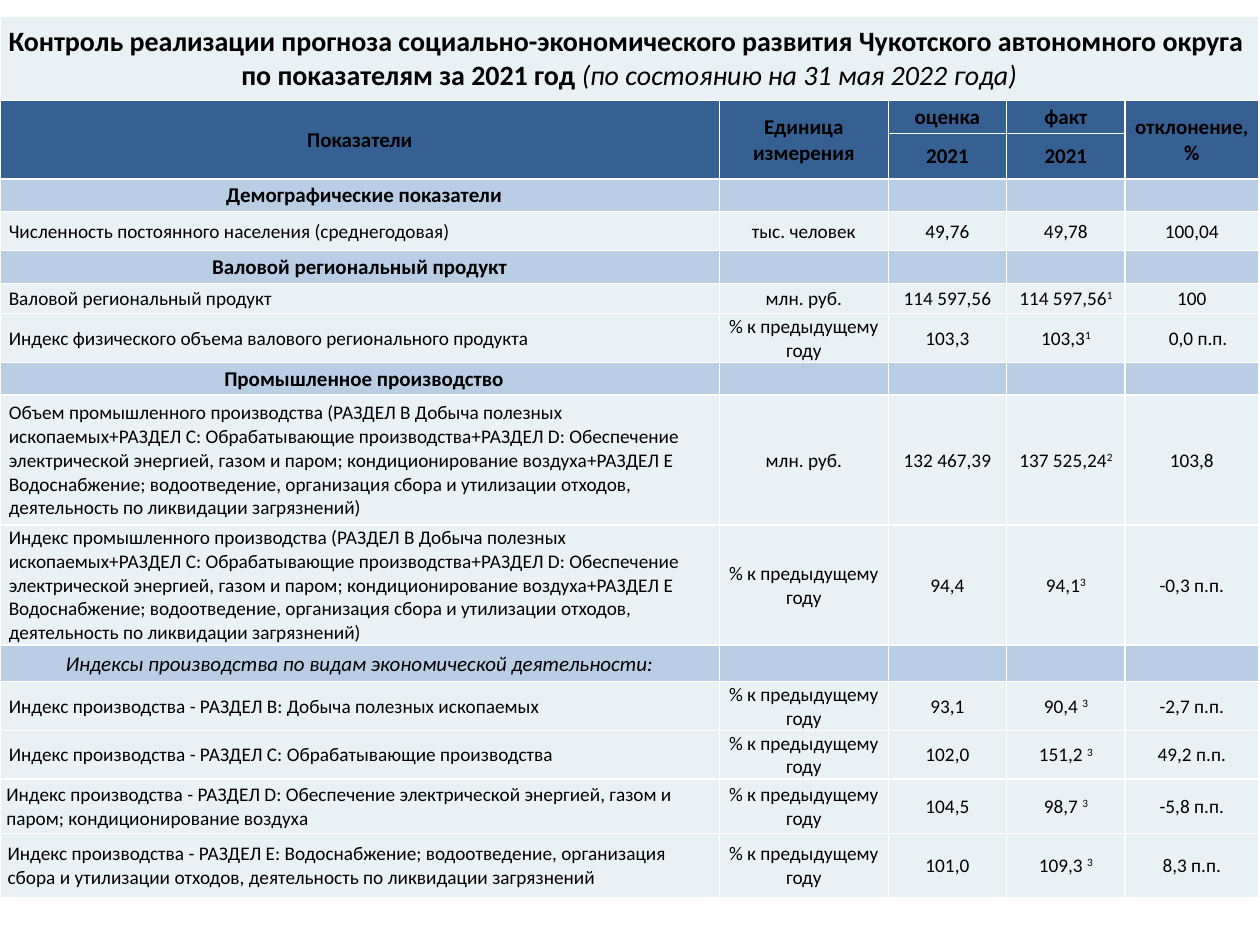
from lxml import etree
from pptx import Presentation
from pptx.dml import color as dml
from pptx.enum import text
from pptx.oxml.ns import qn
from pptx.util import Inches, Pt

COLORS = {"header": "376092", "section": "B9CDE5", "body": "E9F1F5",
          "line": "FFFFFF", "ink": "000000"}
COLUMNS = [5.71, 1.34, 0.94, 0.94, 1.06]
HEADER_HEIGHTS = [0.67, 0.26, 0.36]
SCOPE = ("(РАЗДЕЛ B Добыча полезных ископаемых+РАЗДЕЛ C: Обрабатывающие "
         "производства+РАЗДЕЛ D: Обеспечение электрической энергией, газом и паром; "
         "кондиционирование воздуха+РАЗДЕЛ E Водоснабжение; водоотведение, "
         "организация сбора и утилизации отходов, деятельность по ликвидации "
         "загрязнений)")
PERCENT = "% к предыдущему году"
BOLD = {"size": Pt(12), "bold": True}
ITALIC = {"size": Pt(12), "italic": True}

# Sections: height, heading, heading format, left margin.
# Indicators: height, name, left margin, unit, estimate, fact, footnote, deviation.
ROWS = [
    (0.26, "Демографические показатели", BOLD, 0.08),
    (0.31, "Численность постоянного населения (среднегодовая)", 0.07,
     "тыс. человек", "49,76", "49,78", "", "100,04"),
    (0.26, "Валовой региональный продукт", BOLD, 0.01),
    (0.24, "Валовой региональный продукт", 0.07,
     "млн. руб.", "114 597,56", "114 597,56", "1", "100"),
    (0.37, "Индекс физического объема валового регионального продукта", 0.07,
     PERCENT, "103,3", "103,3", "1", "0,0 п.п."),
    (0.26, "Промышленное производство", BOLD, 0.08),
    (1.03, "Объем промышленного производства " + SCOPE, 0.07,
     "млн. руб.", "132 467,39", "137 525,24", "2", "103,8"),
    (0.94, "Индекс промышленного производства " + SCOPE, 0.07,
     PERCENT, "94,4", "94,1", "3", "-0,3 п.п."),
    (0.29, "Индексы производства по видам экономической деятельности:", ITALIC, 0.01),
    (0.37, "Индекс производства - РАЗДЕЛ B: Добыча полезных ископаемых", 0.07,
     PERCENT, "93,1", "90,4 ", "3", "-2,7 п.п."),
    (0.37, "Индекс производства - РАЗДЕЛ C: Обрабатывающие производства", 0.07,
     PERCENT, "102,0", "151,2 ", "3", "49,2 п.п."),
    (0.43, "Индекс производства - РАЗДЕЛ D: Обеспечение электрической энергией, "
     "газом и паром; кондиционирование воздуха", 0.05,
     PERCENT, "104,5", "98,7 ", "3", "-5,8 п.п."),
    (0.51, "Индекс производства - РАЗДЕЛ E: Водоснабжение; водоотведение, "
     "организация сбора и утилизации отходов, деятельность по ликвидации "
     "загрязнений", 0.06,
     PERCENT, "101,0", "109,3 ", "3", "8,3 п.п."),
]


class ForecastSlide:
    font = "Calibri"

    def __init__(self, deck):
        self.slide = deck.slides.add_slide(deck.slide_layouts[6])

    def table(self, left, top, widths, heights):
        grid = self.slide.shapes.add_table(
            len(heights), len(widths), Inches(left), Inches(top),
            Inches(sum(widths)), Inches(sum(heights))).table
        grid.first_row = grid.horz_banding = False
        for column, width in zip(grid.columns, widths):
            column.width = Inches(width)
        for row, height in zip(grid.rows, heights):
            row.height = Inches(height)
        return grid

    def paint(self, cell, color):
        """Set white borders, fill, margins and a small size for empty text."""
        properties = cell._tc.get_or_add_tcPr()
        for side in ("lnL", "lnR", "lnT", "lnB"):
            border = etree.SubElement(properties, qn(f"a:{side}"), w=str(Pt(1)))
            solid = etree.SubElement(border, qn("a:solidFill"))
            etree.SubElement(solid, qn("a:srgbClr"), val=COLORS["line"])
        cell.fill.solid()
        cell.fill.fore_color.rgb = dml.RGBColor.from_string(COLORS[color])
        layout = {"margin_left": Inches(0.01), "margin_top": Inches(0.01),
                  "margin_right": Inches(0.01), "margin_bottom": 0,
                  "vertical_anchor": text.MSO_ANCHOR.MIDDLE}
        for name, value in layout.items():
            setattr(cell, name, value)
        etree.SubElement(cell.text_frame.paragraphs[0]._p,
                         qn("a:endParaRPr"), sz="1100")

    def label(self, cell, content, style, left=0.01, align=text.PP_ALIGN.CENTER,
              footnote=""):
        cell.margin_left = Inches(left)
        paragraph = cell.text_frame.paragraphs[0]
        paragraph.alignment = align
        for index, line in enumerate(content.split("\n")):
            if index:
                paragraph.add_line_break()
            self.run(paragraph, line, style)
        if footnote:
            mark = self.run(paragraph, footnote, style)
            mark._r.get_or_add_rPr().set("baseline", "30000")

    def run(self, paragraph, content, style):
        piece = paragraph.add_run()
        piece.text = content
        look = {"name": self.font, "bold": False, "italic": False, **style}
        for name, value in look.items():
            setattr(piece.font, name, value)
        piece.font.color.rgb = dml.RGBColor.from_string(COLORS["ink"])
        return piece

    def header(self, grid):
        for first, last in (((0, 0), (0, 4)), ((1, 0), (2, 0)),
                            ((1, 1), (2, 1)), ((1, 4), (2, 4))):
            grid.cell(*first).merge(grid.cell(*last))
        title = grid.cell(0, 0)
        self.label(title, "Контроль реализации прогноза социально-экономического "
                   "развития Чукотского автономного округа \n"
                   "по показателям за 2021 год ", {"size": Pt(16), "bold": True})
        self.run(title.text_frame.paragraphs[0], "(по состоянию на 31 мая 2022 года)",
                 {"size": Pt(16), "italic": True})
        headings = ["Показатели", "Единица измерения", "оценка", "факт",
                    "отклонение, %"]
        for column, heading in enumerate(headings):
            self.label(grid.cell(1, column), heading, BOLD)
        for column in (2, 3):
            self.label(grid.cell(2, column), "2021", BOLD)

    def indicator(self, cells, name, left, unit, estimate, fact, footnote, deviation):
        style = {"size": Pt(11)}
        self.label(cells[0], name, style, left, text.PP_ALIGN.LEFT)
        self.label(cells[1], unit, style)
        self.label(cells[2], estimate, style)
        self.label(cells[3], fact, style, footnote=footnote)
        self.label(cells[4], deviation, style,
                   left=0.11 if deviation.startswith("0,0") else 0.01)


def main():
    deck = Presentation()
    deck.slide_width, deck.slide_height = Inches(10), Inches(7.5)
    forecast = ForecastSlide(deck)
    grid = forecast.table(0, 0.13, COLUMNS, HEADER_HEIGHTS + [row[0] for row in ROWS])
    bands = ["body", "header", "header"]
    bands += ["section" if len(row) == 4 else "body" for row in ROWS]
    for row, band in zip(grid.rows, bands):
        for cell in row.cells:
            forecast.paint(cell, band)
    forecast.header(grid)
    for index, (_, *content) in enumerate(ROWS, start=len(HEADER_HEIGHTS)):
        cells = [grid.cell(index, column) for column in range(len(COLUMNS))]
        if bands[index] == "section":
            forecast.label(cells[0], *content)
        else:
            forecast.indicator(cells, *content)
    deck.save("out.pptx")


if __name__ == "__main__":
    main()
